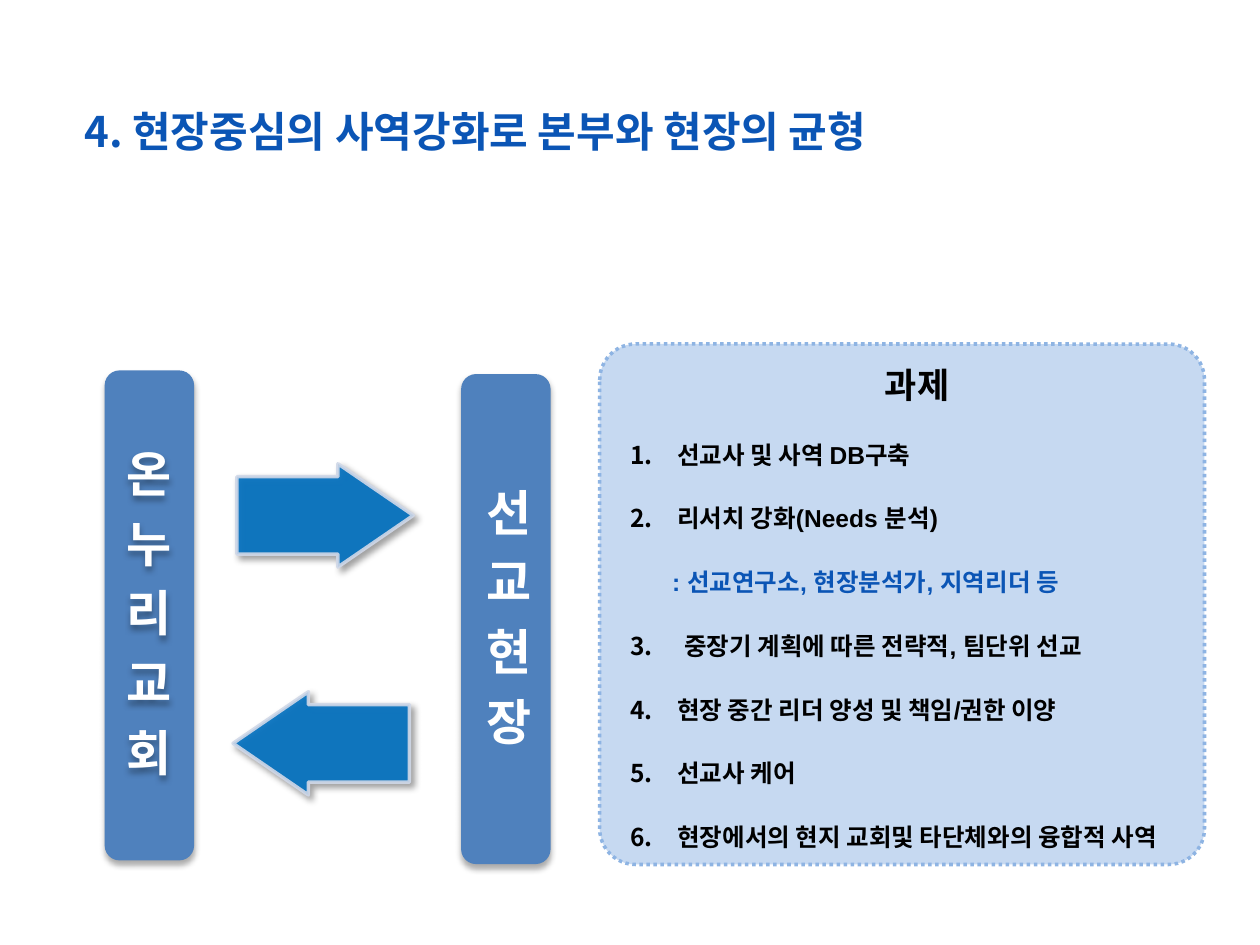
from lxml import etree
from pptx import Presentation
from pptx.dml.color import RGBColor
from pptx.enum import dml, shapes, text
from pptx.oxml import ns
from pptx.util import Pt

HANGUL = "Noto Sans CJK KR"
BLUE, BLACK, WHITE = "0B55B5", "000000", "FFFFFF"
BAR_SHADOW = (32, 3.5, 2.2, 90)
ARROW_SHADOW = (40, 4, 3, 45)
NUMBERED, HEADING, NOTE = "numbered", "heading", "note"


def color(hex_code):
    return RGBColor.from_string(hex_code)


def child(parent, tag, **attributes):
    values = {key: str(value) for key, value in attributes.items()}
    return etree.SubElement(parent, ns.qn(tag), values)


def points(*lengths):
    return [Pt(length) for length in lengths]


def set_opacity(shape, percent):
    for tint in list(shape.element.spPr.iter(ns.qn("a:srgbClr"))):
        child(tint, "a:alpha", val=percent * 1000)


def cast_shadow(shape, opacity, blur, distance, angle):
    shape.shadow.inherit = False
    effects = shape.element.spPr.find(ns.qn("a:effectLst"))
    outer = child(effects, "a:outerShdw", blurRad=Pt(blur), dist=Pt(distance),
                  dir=angle * 60000, rotWithShape=0)
    tint = child(outer, "a:srgbClr", val=BLACK)
    child(tint, "a:alpha", val=opacity * 1000)


def add_panel(parent, preset, box, fill, line=None, width=2):
    panel = parent.add_shape(preset, *points(*box))
    panel.shadow.inherit = False
    panel.fill.solid()
    panel.fill.fore_color.rgb = color(fill)
    if line:
        panel.line.color.rgb = color(line)
        panel.line.width = Pt(width)
    else:
        panel.line.fill.background()
    return panel


def prepare_frame(frame, anchor, side=0, top=0):
    frame.word_wrap = True
    frame.auto_size = text.MSO_AUTO_SIZE.NONE
    frame.vertical_anchor = anchor
    frame.margin_left = frame.margin_right = Pt(side)
    frame.margin_top = frame.margin_bottom = Pt(top)


def place(placeholder, box):
    (placeholder.left, placeholder.top,
     placeholder.width, placeholder.height) = points(*box)


def add_run(paragraph, words, size, font, tint):
    run = paragraph.add_run()
    run.text = words
    run.font.size = Pt(size)
    run.font.bold = True
    run.font.name = font
    run.font.color.rgb = color(tint)
    child(run.font._element, "a:ea", typeface=HANGUL)


def paragraphs(frame, count):
    yield frame.paragraphs[0]
    for _ in range(count - 1):
        yield frame.add_paragraph()


def write_title(title, box):
    place(title, box)
    prepare_frame(title.text_frame, text.MSO_ANCHOR.MIDDLE)
    paragraph = title.text_frame.paragraphs[0]
    paragraph.alignment = text.PP_ALIGN.LEFT
    add_run(paragraph, "4. 현장중심의 사역강화로 본부와 현장의 균형", 24, HANGUL, BLUE)


def add_pillar(slide, box, label, label_offset, raised_label=False):
    left, top, width, height = box
    group = slide.shapes.add_group_shape()
    bar = add_panel(group.shapes, shapes.MSO_SHAPE.ROUNDED_RECTANGLE, box, "4F81BD")
    cast_shadow(bar, *BAR_SHADOW)
    label_box = group.shapes.add_textbox(
        *points(left + label_offset, top + 13.7, 47.5, height - 27.4))
    if raised_label:
        cast_shadow(label_box, *BAR_SHADOW)
    frame = label_box.text_frame
    prepare_frame(frame, text.MSO_ANCHOR.MIDDLE, 8.6, 4.3)
    for paragraph, syllable in zip(paragraphs(frame, len(label)), label):
        paragraph.alignment = text.PP_ALIGN.CENTER
        paragraph.line_spacing = Pt(30)
        paragraph.space_after = Pt(9.8)
        add_run(paragraph, syllable, 28, "Cambria", WHITE)


def add_arrow(slide, preset, box):
    arrow = add_panel(slide.shapes, preset, box, "0070C0", "D0D8E8")
    arrow.adjustments[0], arrow.adjustments[1] = 0.75, 0.73
    set_opacity(arrow, 90)
    cast_shadow(arrow, *ARROW_SHADOW)


def set_marker(paragraph, kind, start, indent):
    properties = paragraph._p.get_or_add_pPr()
    hanging = -Pt(indent) if kind == NUMBERED else 0
    properties.set("marL", str(Pt(indent)))
    properties.set("indent", str(hanging))
    if kind == NUMBERED:
        child(properties, "a:buFont", typeface="Arial")
        child(properties, "a:buAutoNum", type="arabicPeriod", startAt=start)
    else:
        child(properties, "a:buNone")


def add_task_card(slide, box):
    card = add_panel(slide.shapes, shapes.MSO_SHAPE.ROUNDED_RECTANGLE, box,
                     "C6D9F1", "8EB4E3")
    card.adjustments[0] = 0.069
    card.line.dash_style = dml.MSO_LINE.ROUND_DOT


def write_tasks(body, box):
    tasks = [
        (HEADING, 1, 0, "과제"),
        (NUMBERED, 1, 27, "선교사 및 사역 DB구축"),
        (NUMBERED, 1, 27, "리서치 강화(Needs 분석)"),
        (NOTE, 1, 24, ": 선교연구소, 현장분석가, 지역리더 등"),
        (NUMBERED, 3, 31, "중장기 계획에 따른 전략적, 팀단위 선교"),
        (NUMBERED, 3, 27, "현장 중간 리더 양성 및 책임/권한 이양"),
        (NUMBERED, 3, 27, "선교사 케어"),
        (NUMBERED, 3, 27, "현장에서의 현지 교회및 타단체와의 융합적 사역"),
    ]
    place(body, box)
    frame = body.text_frame
    prepare_frame(frame, text.MSO_ANCHOR.TOP)
    for paragraph, (kind, start, indent, words) in zip(paragraphs(frame, len(tasks)), tasks):
        heading = kind == HEADING
        paragraph.alignment = text.PP_ALIGN.CENTER if heading else text.PP_ALIGN.LEFT
        paragraph.line_spacing = Pt(49.5 if heading else 32.4)
        paragraph.space_before = Pt(0 if heading else 4)
        set_marker(paragraph, kind, start, indent)
        add_run(paragraph, words, 20 if heading else 14, "Arial",
                BLUE if kind == NOTE else BLACK)


def main():
    deck = Presentation()
    deck.slide_width, deck.slide_height = points(720, 540)
    slide = deck.slides.add_slide(deck.slide_layouts[1])
    title, body = slide.placeholders

    write_title(title, (48.2, 60.5, 561, 28.8))
    add_arrow(slide, shapes.MSO_SHAPE.RIGHT_ARROW, (135.4, 265, 100.8, 59))
    add_pillar(slide, (263.5, 213.8, 51.1, 280), "선교현장", 3.6)
    add_arrow(slide, shapes.MSO_SHAPE.LEFT_ARROW, (133.2, 395.3, 100.8, 59))
    add_pillar(slide, (59.8, 211.7, 51.1, 280), "온누리교회", 1.4, raised_label=True)
    add_task_card(slide, (342.7, 196.6, 345.6, 297.4))
    write_tasks(body, (360, 182.2, 328.3, 347))
    slide.shapes._spTree.append(body.element)

    deck.save("out.pptx")


if __name__ == "__main__":
    main()
